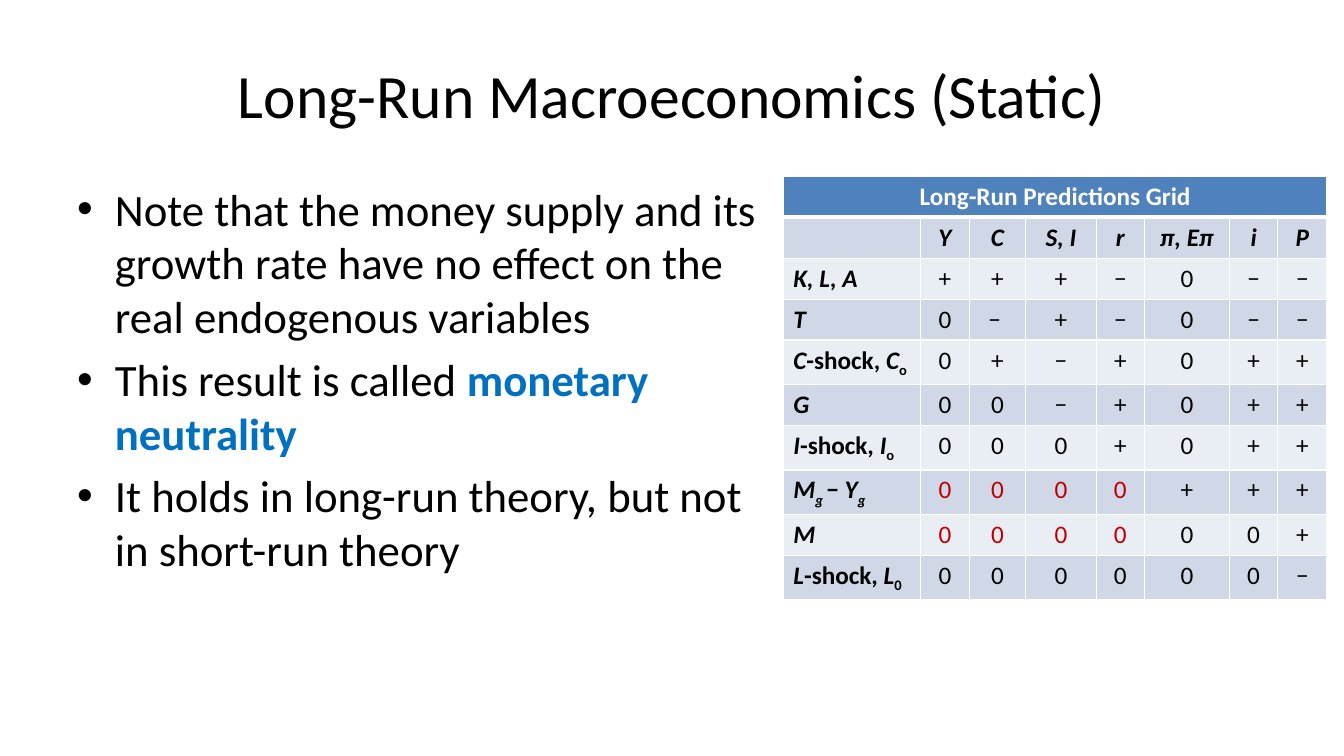
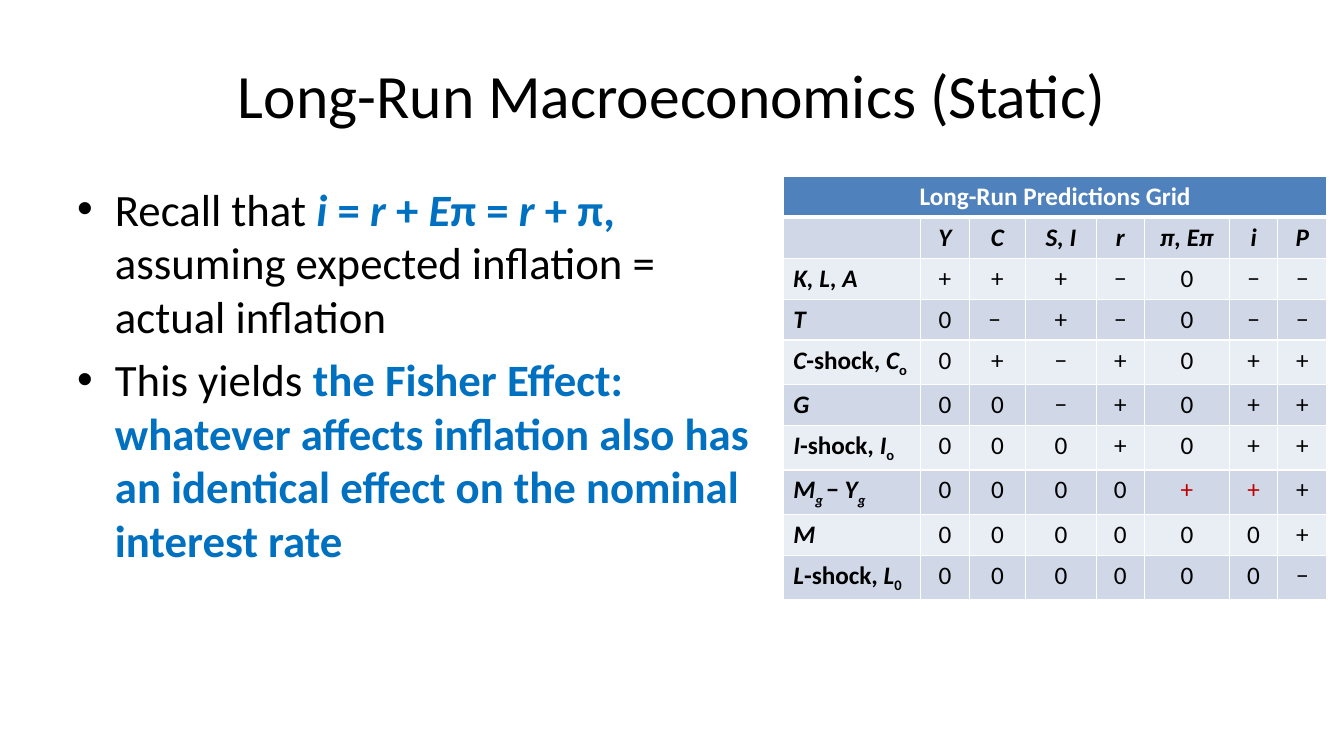
from itertools import product

from lxml.etree import SubElement
from pptx import Presentation
from pptx.dml.color import RGBColor
from pptx.enum.text import MSO_ANCHOR, PP_ALIGN
from pptx.oxml.ns import qn
from pptx.util import Pt

PX = 9525  # EMU per px, 96 px to the inch
FONT = "Calibri"
COLORS = {
    "ink": "000000",
    "paper": "FFFFFF",
    "accent": "0070C0",
    "marked": "C00000",
    "header": "4F81BD",
    "dark_band": "D0D8E8",
    "light_band": "E9EDF4",
}

# Text formats
BOLD = {"bold": True}
VARIABLE = {"bold": True, "italic": True}
KEY = {"color": "accent", "bold": True}
KEY_VARIABLE = {**KEY, "italic": True}


def add_text(para, text, size=18, color="ink", bold=False, italic=False, sub=False):
    span = para.add_run()
    span.text = text
    font = span.font
    font.name, font.size = FONT, Pt(size)
    font.bold, font.italic = bold, italic
    font.color.rgb = RGBColor.from_string(COLORS[color])
    if sub:
        span._r.get_or_add_rPr().set("baseline", "-25000")


def shock(letter, mark):
    """Label of a shock row, with its autonomous variable."""
    return [(letter, VARIABLE), ("-shock, ", BOLD), (letter, VARIABLE),
            (mark, {**BOLD, "sub": True})]


# Predictions grid: row label and signs by column
TITLE = "Long-Run Macroeconomics (Static)"
GRID_TITLE = "Long-Run Predictions Grid"
VARIABLES = ["Y", "C", "S, I", "r", "π, Eπ", "i", "P"]
SUBSCRIPT = {**VARIABLE, "sub": True}
MONEY_GROWTH = [("M", VARIABLE), ("g ", SUBSCRIPT), ("− ", BOLD),
                ("Y", VARIABLE), ("g", SUBSCRIPT)]
PREDICTIONS = [
    ([("K, L, A", VARIABLE)], "+|+|+|−|0|−|−"),
    ([("T", VARIABLE)], "0|− |+|−|0|−|−"),
    (shock("C", "o"), "0|+|−|+|0|+|+"),
    ([("G", VARIABLE)], "0|0|−|+|0|+|+"),
    (shock("I", "o"), "0|0|0|+|0|+|+"),
    (MONEY_GROWTH, "0|0|0|0|+|+|+"),
    ([("M", VARIABLE)], "0|0|0|0|0|0|+"),
    (shock("L", "0"), "0|0|0|0|0|0|−"),
]
MONEY_GROWTH_ROW, MONEY_ROW = 5, 6
COLUMN_WIDTHS = [131, 46, 54, 67, 46, 81, 46, 47]
ROW_HEIGHT = 39

# Each slide: bullets and the (row, column) of the marked signs
SLIDES = [
    (
        [
            [("Note that the money supply and its growth rate have no effect "
              "on the real endogenous variables", {})],
            [("This result is called ", {}), ("monetary neutrality", KEY)],
            [("It holds in long-run theory, but not in short-run theory", {})],
        ],
        set(product((MONEY_GROWTH_ROW, MONEY_ROW), range(4))),
    ),
    (
        [
            [("Recall that ", {}), ("i", KEY_VARIABLE), (" = ", KEY),
             ("r", KEY_VARIABLE), (" + ", KEY), ("E", KEY_VARIABLE),
             ("π = ", KEY), ("r", KEY_VARIABLE), (" + π,", KEY),
             (" assuming expected inflation = actual inflation", {})],
            [("This yields ", {}),
             ("the Fisher Effect: whatever affects inflation also has an "
              "identical effect on the nominal interest rate", KEY)],
        ],
        set(product((MONEY_GROWTH_ROW,), (4, 5))),
    ),
]


class Lecture:
    """Holds the deck, its style and the current page."""

    def __init__(self):
        self.deck = Presentation()
        self.deck.slide_width, self.deck.slide_height = 1280 * PX, 720 * PX
        self.page = None

    def add_page(self, title):
        self.page = self.deck.slides.add_slide(self.deck.slide_layouts[5])
        box = self.page.shapes.title
        box.left, box.top, box.width, box.height = 64 * PX, 29 * PX, 1152 * PX, 120 * PX
        box.text_frame.vertical_anchor = MSO_ANCHOR.MIDDLE
        para = box.text_frame.paragraphs[0]
        para.alignment = PP_ALIGN.CENTER
        add_text(para, title, size=44)

    def add_bullets(self, bullets, left, top, width, height):
        box = self.page.shapes.add_textbox(left * PX, top * PX, width * PX, height * PX)
        frame = box.text_frame
        frame.word_wrap = True
        for index, spans in enumerate(bullets):
            para = frame.add_paragraph() if index else frame.paragraphs[0]
            para.space_before = Pt(6.4)
            properties = para._p.get_or_add_pPr()
            properties.set("marL", str(36 * PX))
            properties.set("indent", str(-36 * PX))
            SubElement(properties, qn("a:buFont")).set("typeface", "Arial")
            SubElement(properties, qn("a:buChar")).set("char", "•")
            for text, style in spans:
                add_text(para, text, size=32, **style)

    def format_cell(self, cell, fill, spans=(), centered=True, bottom=1):
        properties = cell._tc.get_or_add_tcPr()
        # Borders come before the fill
        for side in "LRTB":
            width = bottom if side == "B" else 1
            line = SubElement(properties, qn(f"a:ln{side}"), w=str(Pt(width)))
            solid = SubElement(line, qn("a:solidFill"))
            SubElement(solid, qn("a:srgbClr")).set("val", COLORS["paper"])
        cell.fill.solid()
        cell.fill.fore_color.rgb = RGBColor.from_string(COLORS[fill])
        para = cell.text_frame.paragraphs[0]
        para.alignment = PP_ALIGN.CENTER if centered else PP_ALIGN.LEFT
        for text, style in spans:
            add_text(para, text, **style)

    def add_grid(self, marked, left, top):
        row_count, column_count = len(PREDICTIONS) + 2, len(COLUMN_WIDTHS)
        table = self.page.shapes.add_table(
            row_count, column_count, left * PX, top * PX,
            sum(COLUMN_WIDTHS) * PX, row_count * ROW_HEIGHT * PX).table
        table.first_row = table.horz_banding = False
        for column, width in zip(table.columns, COLUMN_WIDTHS):
            column.width = width * PX

        # Title row across all columns
        table.cell(0, 0).merge(table.cell(0, column_count - 1))
        for column in range(column_count):
            title = [] if column else [(GRID_TITLE, {**BOLD, "color": "paper"})]
            self.format_cell(table.cell(0, column), "header", title, bottom=3)

        # Variable names
        self.format_cell(table.cell(1, 0), "dark_band")
        for column, name in enumerate(VARIABLES, 1):
            self.format_cell(table.cell(1, column), "dark_band", [(name, VARIABLE)])

        # Signs
        for row, (label, signs) in enumerate(PREDICTIONS):
            band = "dark_band" if row % 2 else "light_band"
            self.format_cell(table.cell(row + 2, 0), band, label, centered=False)
            for column, sign in enumerate(signs.split("|")):
                color = "marked" if (row, column) in marked else "ink"
                self.format_cell(table.cell(row + 2, column + 1), band,
                                 [(sign, {"color": color})])


def main():
    lecture = Lecture()
    for bullets, marked in SLIDES:
        lecture.add_page(TITLE)
        lecture.add_bullets(bullets, 64, 168, 682, 475)
        lecture.add_grid(marked, 746, 168)
    lecture.deck.save("out.pptx")


if __name__ == "__main__":
    main()
